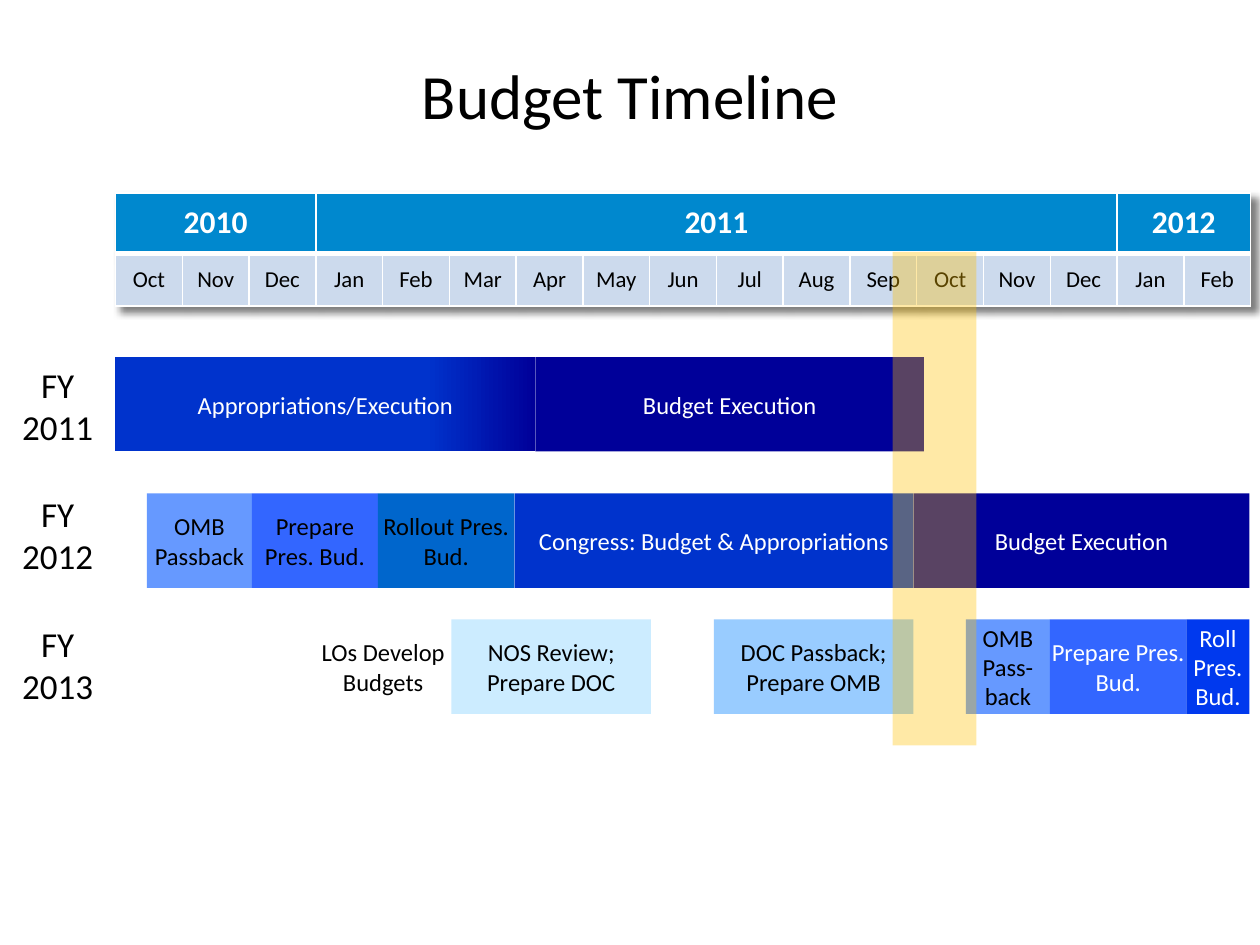
from pptx import Presentation
from pptx.dml.color import RGBColor
from pptx.enum.shapes import MSO_SHAPE
from pptx.enum.text import MSO_ANCHOR, PP_ALIGN
from pptx.oxml import parse_xml
from pptx.oxml.ns import nsdecls
from pptx.util import Pt

FONT = "Calibri"
WHITE, BLACK, NAVY = "FFFFFF", "000000", "000099"
YEARS = [("2010", 3), ("2011", 12), ("2012", 2)]
MONTHS = "Oct Nov Dec Jan Feb Mar Apr May Jun Jul Aug Sep Oct Nov Dec Jan Feb".split()
FISCAL_YEARS = [
    ("FY 2011", 204, [
        ("Appropriations/Execution", 66, 306, (NAVY, "0033CC"), WHITE),
        ("Budget Execution", 306, 528, NAVY, WHITE),
    ]),
    ("FY 2012", 282, [
        ("OMB Passback", 84, 144, "6699FF", BLACK),
        ("Prepare Pres. Bud.", 144, 216, "3366FF", BLACK),
        ("Rollout Pres. Bud.", 216, 294, "0066CC", BLACK),
        ("Congress: Budget & Appropriations", 294, 522, "0033CC", WHITE),
        ("Budget Execution", 522, 714, NAVY, WHITE),
    ]),
    ("FY 2013", 354, [
        ("LOs Develop Budgets", 180, 258, WHITE, BLACK),
        ("NOS Review; Prepare DOC", 258, 372, "CCECFF", BLACK),
        ("DOC Passback; Prepare OMB", 408, 522, "99CCFF", BLACK),
        ("OMB Pass-back", 552, 600, "6699FF", BLACK),
        ("Prepare Pres. Bud.", 600, 678, "3366FF", WHITE),
        ("Roll Pres. Bud.", 678, 714, "0039EE", WHITE),
    ]),
]
TIMELINE_LEFT, TIMELINE_TOP, MONTH_WIDTH = 66, 110.16, 38.16
YEAR_HEIGHT, MONTH_HEIGHT = 34.56, 30.24
BAR_HEIGHT = 54
LABEL_TOP, LABEL_PITCH = 204, 74


def color(value):
    return RGBColor.from_string(value)


def write(frame, text, size, text_color, bold=False):
    paragraph = frame.paragraphs[0]
    paragraph.alignment = PP_ALIGN.CENTER
    run = paragraph.add_run()
    run.text = text
    run.font.name = FONT
    run.font.size = Pt(size)
    run.font.bold = bold
    run.font.color.rgb = color(text_color)


def clear_margins(target):
    target.margin_left = target.margin_right = 0
    target.margin_top = target.margin_bottom = 0


def add_rectangle(slide, left, top, width, height, fill):
    shape = slide.shapes.add_shape(MSO_SHAPE.RECTANGLE, Pt(left), Pt(top), Pt(width), Pt(height))
    shape.shadow.inherit = False
    shape.line.fill.background()
    if isinstance(fill, tuple):
        shape.fill.gradient()
        shape.fill.gradient_angle = 180
        for stop, position, value in zip(shape.fill.gradient_stops, (0, 0.26), fill):
            stop.position = position
            stop.color.rgb = color(value)
    else:
        shape.fill.solid()
        shape.fill.fore_color.rgb = color(fill)
    return shape


def add_bar(slide, top, text, start, end, fill, text_color):
    bar = add_rectangle(slide, start, top, end - start, BAR_HEIGHT, fill)
    frame = bar.text_frame
    frame.word_wrap = True
    frame.vertical_anchor = MSO_ANCHOR.MIDDLE
    clear_margins(frame)
    write(frame, text, 14, text_color)


def style_cell(cell, fill, bottom_width, top_width):
    clear_margins(cell)
    cell.vertical_anchor = MSO_ANCHOR.MIDDLE
    properties = cell._tc.get_or_add_tcPr()
    for side, width in (("L", 1), ("R", 1), ("T", top_width), ("B", bottom_width)):
        properties.append(parse_xml(
            f'<a:ln{side} {nsdecls("a")} w="{Pt(width)}"><a:solidFill>'
            f'<a:srgbClr val="{WHITE}"/></a:solidFill></a:ln{side}>'))
    cell.fill.solid()
    cell.fill.fore_color.rgb = color(fill)


def add_calendar(slide):
    table = slide.shapes.add_table(
        2, len(MONTHS), Pt(TIMELINE_LEFT), Pt(TIMELINE_TOP),
        Pt(MONTH_WIDTH * len(MONTHS)), Pt(YEAR_HEIGHT + MONTH_HEIGHT)).table
    table._tbl.tblPr.insert(0, parse_xml(
        f'<a:effectLst {nsdecls("a")}><a:outerShdw blurRad="50800" dist="50800" dir="2700000">'
        f'<a:srgbClr val="{BLACK}"><a:alpha val="50000"/></a:srgbClr></a:outerShdw></a:effectLst>'))
    table.rows[0].height, table.rows[1].height = Pt(YEAR_HEIGHT), Pt(MONTH_HEIGHT)
    for index, month in enumerate(MONTHS):
        table.columns[index].width = Pt(MONTH_WIDTH)
        style_cell(table.cell(0, index), "0088CE", 3, 1)
        style_cell(table.cell(1, index), "CCDAED", 1, 3)
        write(table.cell(1, index).text_frame, month, 13, BLACK)
    first = 0
    for year, months in YEARS:
        cell = table.cell(0, first)
        cell.merge(table.cell(0, first + months - 1))
        write(cell.text_frame, year, 18, WHITE, bold=True)
        first += months


def main():
    presentation = Presentation()
    presentation.slide_width, presentation.slide_height = Pt(720), Pt(540)
    slide = presentation.slides.add_slide(presentation.slide_layouts[5])

    title = slide.shapes.title
    title.left, title.top, title.width, title.height = Pt(54), Pt(24), Pt(612), Pt(60)
    title.text_frame.vertical_anchor = MSO_ANCHOR.MIDDLE
    write(title.text_frame, "Budget Timeline", 36, BLACK)

    add_calendar(slide)
    for index, (label, bar_top, bars) in enumerate(FISCAL_YEARS):
        label_box = slide.shapes.add_textbox(
            0, Pt(LABEL_TOP + index * LABEL_PITCH), Pt(TIMELINE_LEFT), Pt(55.44))
        label_box.text_frame.word_wrap = True
        write(label_box.text_frame, label, 20, BLACK)
        for bar in bars:
            add_bar(slide, bar_top, *bar)

    current_period = add_rectangle(slide, 510, 144, 48, 282, "FFC000")
    fill_color = current_period.fill._xPr.find(".//{*}srgbClr")
    fill_color.append(parse_xml(f'<a:alpha {nsdecls("a")} val="35000"/>'))

    presentation.save("out.pptx")


if __name__ == "__main__":
    main()
